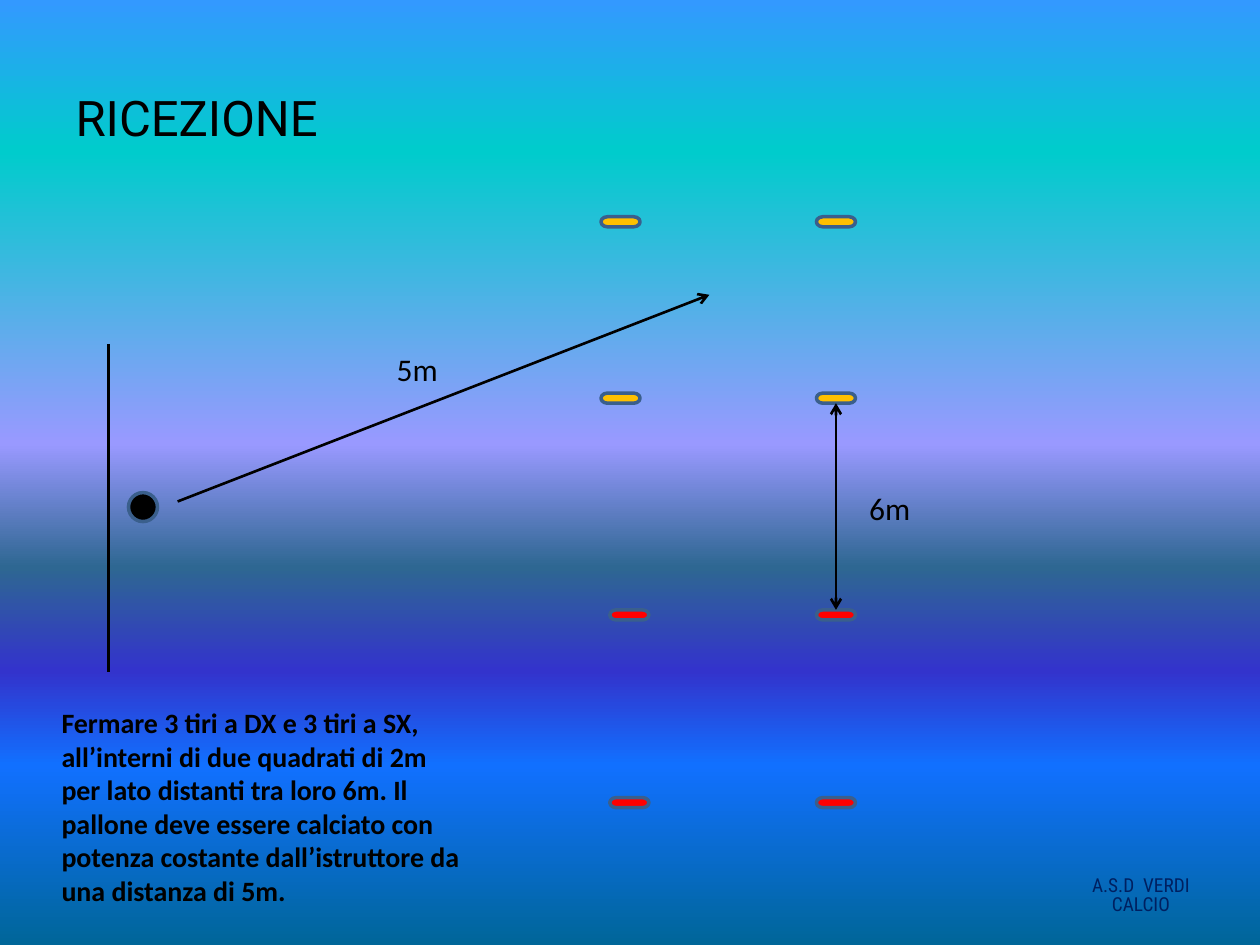
from lxml import etree
from pptx import Presentation
from pptx import util as u
from pptx.dml.color import RGBColor
from pptx.enum import shapes, text
from pptx.oxml.ns import qn

COLS, ROWS = 100, 75
BLACK, STEEL, AMBER, RED, NAVY = "000000", "3A5F8C", "FFC000", "FF0000", "002060"
SKY = [(0, "3399FF"), (16, "00CCCC"), (47, "9999FF"), (60, "2E6792"),
       (71, "3333CC"), (81, "1170FF"), (100, "006699")]
EXERCISE = ("Fermare 3 tiri a DX e 3 tiri a SX, all’interni di due quadrati di 2m "
            "per lato distanti tra loro 6m. Il pallone deve essere calciato con "
            "potenza costante dall’istruttore da una distanza di 5m.")


def rgb(value):
    return RGBColor.from_string(value)


def apply(target, values):
    for name, value in values.items():
        setattr(target, name, value)


class Board:
    def __init__(self, prs):
        self.prs = prs
        self.s = prs.slides.add_slide(prs.slide_layouts[5])
        self.outline = STEEL
        self.outline_width = 2

    def x(self, cols):
        return int(self.prs.slide_width * cols / COLS)

    def y(self, rows):
        return int(self.prs.slide_height * rows / ROWS)

    def box(self, left, top, width, height):
        return self.x(left), self.y(top), self.x(width), self.y(height)

    def background(self, stops):
        fill = self.s.background.fill
        fill.gradient()
        fill.gradient_angle = 270
        gs_list = next(self.s.element.iter(qn("a:gsLst")))
        for gs in list(gs_list):
            gs_list.remove(gs)
        for percent, color in stops:
            gs = etree.SubElement(gs_list, qn("a:gs"), pos=str(percent * 1000))
            etree.SubElement(gs, qn("a:srgbClr"), val=color)

    def set_text(self, sp, words, font, color=BLACK, frame=None, para=None):
        tf = sp.text_frame
        apply(tf, {"word_wrap": True, **(frame or {})})
        p = tf.paragraphs[0]
        apply(p, para or {})
        r = p.add_run()
        r.text = words
        apply(r.font, font)
        r.font.color.rgb = rgb(color)

    def title(self, at, words, font):
        sp = self.s.shapes.title
        apply(sp, dict(zip(("left", "top", "width", "height"), self.box(*at))))
        self.set_text(sp, words, font, frame={"vertical_anchor": text.MSO_ANCHOR.MIDDLE},
                      para={"alignment": text.PP_ALIGN.LEFT})

    def label(self, at, words, font, **style):
        self.set_text(self.s.shapes.add_textbox(*self.box(*at)), words, font, **style)

    def shape(self, kind, at, color):
        sp = self.s.shapes.add_shape(kind, *self.box(*at))
        sp.shadow.inherit = False
        sp.fill.solid()
        sp.fill.fore_color.rgb = rgb(color)
        sp.line.color.rgb = rgb(self.outline)
        sp.line.width = u.Pt(self.outline_width)
        return sp

    def line(self, start, end, width, arrows=()):
        cx = self.s.shapes.add_connector(
            shapes.MSO_CONNECTOR.STRAIGHT, self.x(start[0]), self.y(start[1]),
            self.x(end[0]), self.y(end[1]))
        cx.line.color.rgb = rgb(BLACK)
        cx.line.width = u.Pt(width)
        ln = cx.element.spPr.find(qn("a:ln"))
        for tag in arrows:
            etree.SubElement(ln, qn(f"a:{tag}"), type="arrow")
        etree.SubElement(cx.element.spPr, qn("a:effectLst"))
        return cx


def main():
    prs = Presentation()
    prs.slide_width, prs.slide_height = u.Inches(10), u.Inches(7.5)
    board = Board(prs)
    board.background(SKY)
    board.title((5, 3, 90, 12.5), "RICEZIONE", {"name": "Roboto", "size": u.Pt(28)})

    squares = [(AMBER, (47.7, 64.8), (17.2, 31.2)), (RED, (48.4, 64.8), (48.4, 63.3))]
    cones = {(color, row, col): board.shape(
                 shapes.MSO_SHAPE.FLOWCHART_TERMINATOR, (left, top, 3.1, 0.8), color)
             for color, lefts, tops in squares
             for row, top in enumerate(tops)
             for col, left in enumerate(lefts)}

    gap = board.line((66.4, 48.4), (66.4, 32), 1.5, ("headEnd", "tailEnd"))
    gap.begin_connect(cones[RED, 0, 1], 0)
    gap.end_connect(cones[AMBER, 1, 1], 2)

    board.line((8.6, 27.3), (8.6, 53.3), 2)
    board.shape(shapes.MSO_SHAPE.FLOWCHART_CONNECTOR, (10.2, 39.1, 2.3, 2.3), BLACK)
    board.line((14.1, 39.8), (56.3, 23.4), 1.5, ("tailEnd",))

    distance = {"name": "Calibri", "size": u.Pt(18)}
    for left, top, words in [(68, 38.3, "6m"), (30.5, 27.3, "5m")]:
        board.label((left, top, 12.5, 4), words, distance)
    board.label((3.9, 55.5, 34.4, 17.2), EXERCISE,
                {"name": "Calibri", "size": u.Pt(16), "bold": True})
    board.label((83.6, 68.8, 13.9, 4.7), "A.S.D  VERDI CALCIO",
                {"name": "Roboto Condensed", "size": u.Pt(11)}, color=NAVY,
                frame={"vertical_anchor": text.MSO_ANCHOR.MIDDLE},
                para={"alignment": text.PP_ALIGN.CENTER, "line_spacing": 0.8})
    prs.save("out.pptx")


if __name__ == "__main__":
    main()
